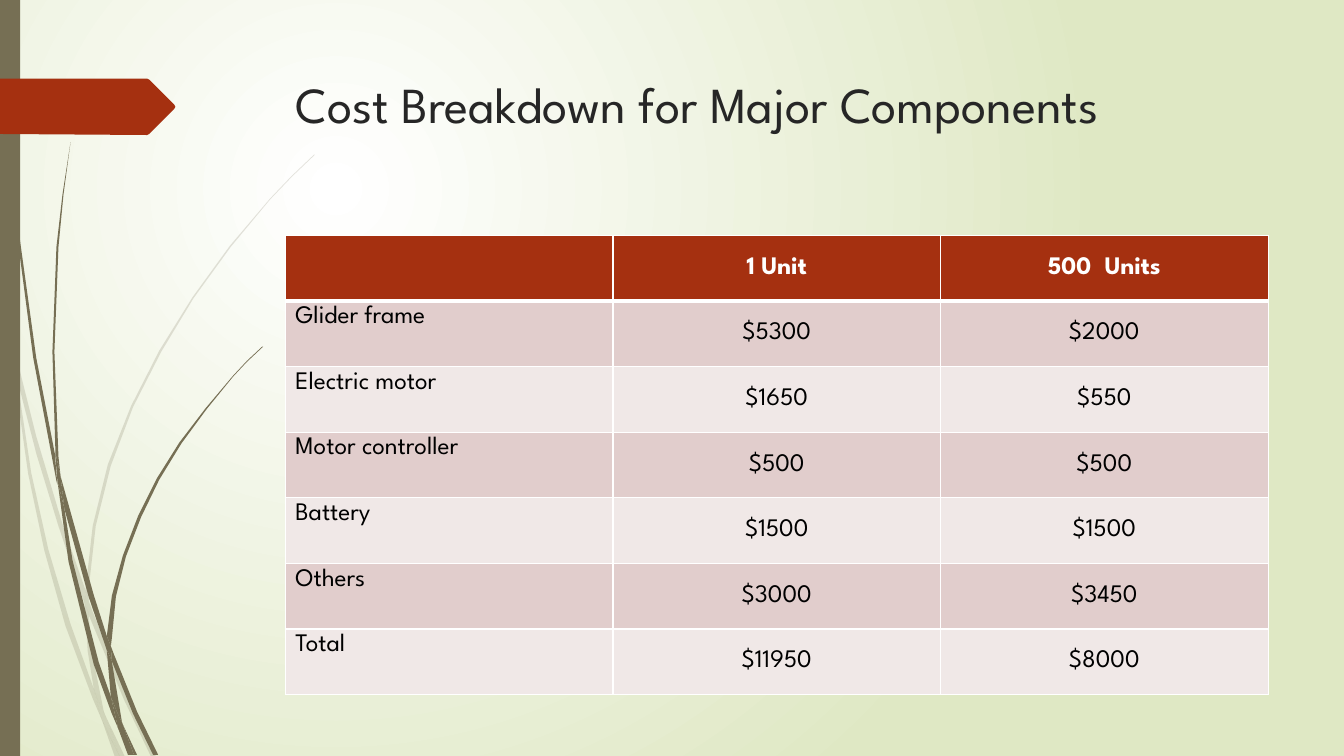
from lxml import etree
from pptx import Presentation
from pptx.dml import color
from pptx.enum import shapes, text
from pptx.oxml import ns
from pptx.util import Pt

FONT = "League Spartan"
OLIVE, RUST, WHITE = "766F54", "A53010", "FFFFFF"


def paint(fill, tone, alpha=None):
    fill.solid()
    fill.fore_color.rgb = color.RGBColor.from_string(tone)
    if alpha:
        node = fill._xPr.find(ns.qn("a:solidFill"))[0]
        etree.SubElement(node, ns.qn("a:alpha")).set("val", str(alpha * 1000))


def write(par, words, size, tone, bold=False):
    run = par.add_run()
    run.text = words
    run.font.name, run.font.size, run.font.bold = FONT, Pt(size), bold
    paint(run.font.fill, tone)


deck = Presentation()
deck.slide_width, deck.slide_height = Pt(960), Pt(540)
slide = deck.slides.add_slide(deck.slide_layouts[6])

# Background: a round glow around the upper left
back = slide.background.fill
back.gradient()
for stop, tone in zip(back.gradient_stops, (WHITE, "DFE8C4")):
    stop.color.rgb = color.RGBColor.from_string(tone)
grad = slide._element.find(".//" + ns.qn("a:gradFill"))
grad.remove(grad.find(ns.qn("a:lin")))
glow = etree.SubElement(grad, ns.qn("a:path"), {"path": "circle"})
etree.SubElement(glow, ns.qn("a:fillToRect"),
                 {"l": "50000", "t": "50000", "r": "100000", "b": "100000"})

# Outlines, in steps of 0.72 pt
STEP = Pt(0.72)
pale = [
    [(11, 350), (9, 322), (0, 282), (0, 299), (10, 344)],
    [(58, 522), (84, 599), (85, 586), (62, 520), (36, 433), (14, 345),
     (17, 376), (36, 450)],
    [(92, 607), (88, 596), (88, 610), (123, 694), (150, 751), (155, 751),
     (127, 692)],
    [(119, 751), (124, 751), (105, 711)],
    [(93, 683), (70, 619), (48, 545), (31, 469), (17, 376), (11, 350),
     (28, 470), (44, 546), (65, 621), (92, 693), (101, 714), (99, 707)],
    [(84, 599), (87, 646), (93, 683), (96, 692), (105, 711), (103, 706),
     (91, 646), (88, 610), (88, 608)],
    [(88, 584), (95, 522), (110, 462), (132, 404), (160, 349), (192, 296),
     (229, 245), (268, 198), (290, 175), (312, 154), (312, 153), (289, 175),
     (268, 197), (228, 244), (191, 295), (158, 348), (130, 403), (107, 461),
     (92, 522), (85, 584), (85, 586), (88, 596)],
    [(101, 714), (114, 751), (119, 751)],
    [(88, 608), (88, 610), (88, 596), (85, 586), (84, 599)],
    [(96, 692), (93, 683), (99, 707), (101, 714), (119, 751), (105, 711)],
]
dark = [
    [(7, 110), (17, 233), (33, 355), (56, 477), (57, 481), (55, 457),
     (55, 453), (36, 355), (19, 232), (8, 109), (5, 48), (4, 0), (3, 0),
     (4, 48)],
    [(88, 592), (106, 645), (106, 633), (106, 631), (93, 590), (60, 472),
     (64, 505)],
    [(113, 649), (110, 641), (111, 656), (132, 708), (152, 749), (157, 749),
     (136, 706)],
    [(110, 691), (98, 657), (72, 556), (64, 505), (57, 477), (68, 557),
     (93, 659), (111, 708), (117, 722), (116, 717)],
    [(60, 472), (58, 453), (54, 349), (58, 245), (63, 193), (70, 141),
     (62, 193), (56, 245), (52, 349), (55, 449)],
    [(133, 749), (136, 749), (122, 719)],
    [(57, 477), (64, 505), (60, 472), (55, 449), (55, 453)],
    [(111, 633), (115, 592), (125, 552), (140, 513), (158, 476), (180, 440),
     (205, 406), (231, 374), (245, 359), (261, 344), (260, 344), (245, 358),
     (231, 373), (204, 405), (178, 439), (156, 474), (137, 512), (122, 551),
     (111, 591), (106, 631), (110, 641)],
    [(117, 722), (127, 749), (131, 749)],
    [(106, 645), (110, 691), (116, 706), (122, 719), (121, 716), (111, 656),
     (109, 651)],
    [(106, 645), (109, 651), (111, 656), (110, 641), (106, 631), (106, 633)],
    [(116, 706), (110, 691), (116, 717), (117, 722), (130, 749), (133, 749),
     (122, 719)],
]
bar = [(0, 0), (20, 0), (20, 750), (0, 750)]
tag = [(173, 108), (148, 133), (146, 134), (0, 133), (0, 78), (146, 78),
       (148, 79), (173, 104), (174, 106)]

# Grass blades and arrow tag, with the side bar between them
for group, tone, alpha in ((pale, OLIVE, 20), (dark, OLIVE, None),
                           ([bar], OLIVE, None), ([tag], RUST, None)):
    for pts in group:
        if pts is bar:
            part = slide.shapes.add_shape(
                shapes.MSO_SHAPE.RECTANGLE, 0, 0, Pt(14.4), Pt(540))
        else:
            pen = slide.shapes.build_freeform(*pts[0], scale=STEP)
            pen.add_line_segments(pts[1:])
            part = pen.convert_to_shape()
        part.shadow.inherit = False
        part.line.fill.background()
        paint(part.fill, tone, alpha)

# Title
box = slide.shapes.add_textbox(Pt(204.2), Pt(49), Pt(702), Pt(100.8))
box.text_frame.word_wrap = True
write(box.text_frame.paragraphs[0], "Cost Breakdown for Major Components",
      36, "262626")

# Cost table
rows = [
    ("", "1 Unit", "500  Units"),
    ("Glider frame", "$5300", "$2000"),
    ("Electric motor", "$1650", "$550"),
    ("Motor controller", "$500", "$500"),
    ("Battery", "$1500", "$1500"),
    ("Others", "$3000", "$3450"),
    ("Total", "$11950", "$8000"),
]
table = slide.shapes.add_table(len(rows), 3, Pt(203.8), Pt(168),
                               Pt(702), Pt(328.3)).table
for r, row in enumerate(rows):
    table.rows[r].height = Pt(46.9)
    for c, words in enumerate(row):
        cell = table.cell(r, c)
        props = cell._tc.get_or_add_tcPr()
        for side in "LRTB":
            wide = 3 if (r, side) in ((0, "B"), (1, "T")) else 1
            edge = etree.SubElement(props, ns.qn("a:ln" + side),
                                    {"w": str(Pt(wide))})
            ink = etree.SubElement(edge, ns.qn("a:solidFill"))
            etree.SubElement(ink, ns.qn("a:srgbClr")).set("val", WHITE)
        paint(cell.fill, RUST if r == 0 else ("F0E8E7", "E1CDCC")[r % 2])
        par = cell.text_frame.paragraphs[0]
        if c:
            cell.vertical_anchor = text.MSO_ANCHOR.MIDDLE
            par.alignment = text.PP_ALIGN.CENTER
        if words:
            write(par, words, 18, "000000" if r else WHITE, r == 0)

deck.save("out.pptx")
